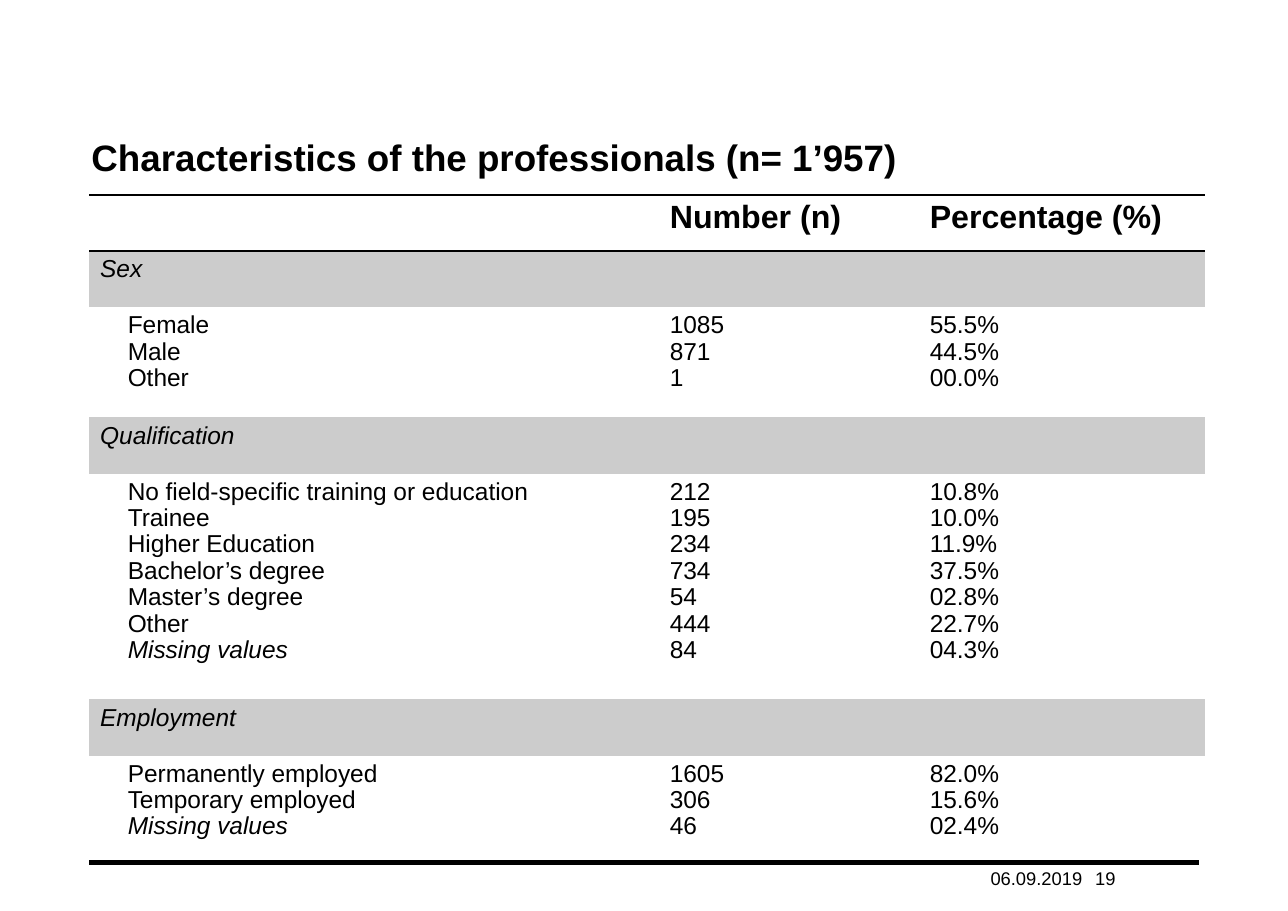
"""Builds the slide with the table of professionals' characteristics."""
from lxml import etree
from pptx import Presentation
from pptx.dml.color import RGBColor
from pptx.enum.shapes import MSO_CONNECTOR
from pptx.enum.text import MSO_ANCHOR, MSO_AUTO_SIZE, PP_ALIGN
from pptx.oxml.ns import qn
from pptx.util import Inches, Pt

BLACK = RGBColor(0, 0, 0)
GREY = RGBColor(0xCC, 0xCC, 0xCC)
STRAIGHT = MSO_CONNECTOR.STRAIGHT
TOP, BOTTOM = MSO_ANCHOR.TOP, MSO_ANCHOR.BOTTOM
LEFT = PP_ALIGN.LEFT
NO_FIT = MSO_AUTO_SIZE.NONE

BODY = {"name": "Arial", "size": Pt(16), "bold": False, "italic": False}
SLANT = {**BODY, "italic": True}
HEAD = {**BODY, "size": Pt(21), "bold": True}
TITLE = {**HEAD, "size": Pt(24)}
FOOT = {**BODY, "size": Pt(12)}
FRAME = {"margin_left": 0, "margin_right": 0, "margin_top": 0,
         "margin_bottom": 0, "word_wrap": True, "auto_size": NO_FIT}

MISSING = "Missing values"
WIDTHS = [5.17, 2.36, 2.6]
HEIGHTS = [0.51, 0.51, 1, 0.51, 2.05, 0.51, 1.06]
GROUPS = [
    ("Sex", [("Female", "1085", "55.5%"),
             ("Male", "871", "44.5%"),
             ("Other", "1", "00.0%")]),
    ("Qualification", [("No field-specific training or education", "212", "10.8%"),
                       ("Trainee", "195", "10.0%"),
                       ("Higher Education", "234", "11.9%"),
                       ("Bachelor’s degree", "734", "37.5%"),
                       ("Master’s degree", "54", "02.8%"),
                       ("Other", "444", "22.7%"),
                       (MISSING, "84", "04.3%")]),
    ("Employment", [("Permanently employed", "1605", "82.0%"),
                    ("Temporary employed", "306", "15.6%"),
                    (MISSING, "46", "02.4%")]),
]


def put(item, values):
    """Set each attribute of an item from a dict."""
    for name, value in values.items():
        setattr(item, name, value)


def write(para, text, look):
    """Give a paragraph its text and font."""
    para.text = text
    para.alignment = LEFT
    put(para.font, look)
    para.font.color.rgb = BLACK


def fill_box(shape, place, text, look, anchor):
    """Place a shape without margins and write one line in it."""
    put(shape, dict(zip(("left", "top", "width", "height"), map(Inches, place))))
    frame = shape.text_frame
    put(frame, {**FRAME, "vertical_anchor": anchor})
    write(frame.paragraphs[0], text, look)


def add_rule(slide):
    """Draw the thick line above the footer."""
    rule = slide.shapes.add_connector(
        STRAIGHT, Inches(0.81), Inches(7.83), Inches(10.88), Inches(7.83))
    rule.line.color.rgb = BLACK
    rule.line.width = Pt(3)
    etree.SubElement(rule.element.spPr, qn("a:effectLst"))


def set_edges(cell, lined):
    """Rule the named sides of a cell and clear the others."""
    props = cell._tc.get_or_add_tcPr()
    for spot, side in enumerate("LRTB"):
        edge = etree.Element(qn(f"a:ln{side}"), w=str(Pt(1)))
        if side in lined:
            solid = etree.SubElement(edge, qn("a:solidFill"))
            etree.SubElement(solid, qn("a:srgbClr"), val=str(BLACK))
        else:
            etree.SubElement(edge, qn("a:noFill"))
        props.insert(spot, edge)


def fill_cell(cell, lines, look, indent=0):
    """Write one paragraph per line into a cell."""
    frame = cell.text_frame
    for spot, text in enumerate(lines):
        para = frame.add_paragraph() if spot else frame.paragraphs[0]
        write(para, text, SLANT if text == MISSING else look)
        para.line_spacing = 0.97
        if indent:
            para._p.get_or_add_pPr().set("marL", str(Inches(indent)))


def add_grid(slide):
    """Add the table with its header and its groups."""
    grid = slide.shapes.add_table(
        len(HEIGHTS), len(WIDTHS), Inches(0.81), Inches(1.77),
        Inches(sum(WIDTHS)), Inches(sum(HEIGHTS))).table
    put(grid, {"first_row": False, "horz_banding": False})
    for col, width in zip(grid.columns, WIDTHS):
        col.width = Inches(width)
    for spot, (row, height) in enumerate(zip(grid.rows, HEIGHTS)):
        row.height = Inches(height)
        for cell in row.cells:
            if spot % 2:
                cell.fill.solid()
                cell.fill.fore_color.rgb = GREY
            else:
                cell.fill.background()
            set_edges(cell, {0: "TB", 1: "T"}.get(spot, ""))
    fill_cell(grid.cell(0, 1), ["Number (n)"], HEAD)
    fill_cell(grid.cell(0, 2), ["Percentage (%)"], HEAD)
    for spot, (name, items) in enumerate(GROUPS):
        fill_cell(grid.cell(2 * spot + 1, 0), [name], SLANT)
        for col, lines in enumerate(zip(*items)):
            fill_cell(grid.cell(2 * spot + 2, col), lines, BODY, 0 if col else 0.25)


def main():
    """Build and save the slide."""
    deck = Presentation()
    put(deck, {"slide_width": Inches(11.69), "slide_height": Inches(8.27)})
    slide = deck.slides.add_slide(deck.slide_layouts[5])
    add_rule(slide)
    fill_box(slide.shapes.title, (0.83, 1.22, 10.08, 0.4),
             "Characteristics of the professionals (n= 1’957)", TITLE, TOP)
    for left, text in ((8.99, "06.09.2019"), (9.94, "19")):
        box = slide.shapes.add_textbox(0, 0, 0, 0)
        fill_box(box, (left, 7.87, 0.95, 0.2), text, FOOT, BOTTOM)
    add_grid(slide)
    deck.save("out.pptx")


if __name__ == "__main__":
    main()
